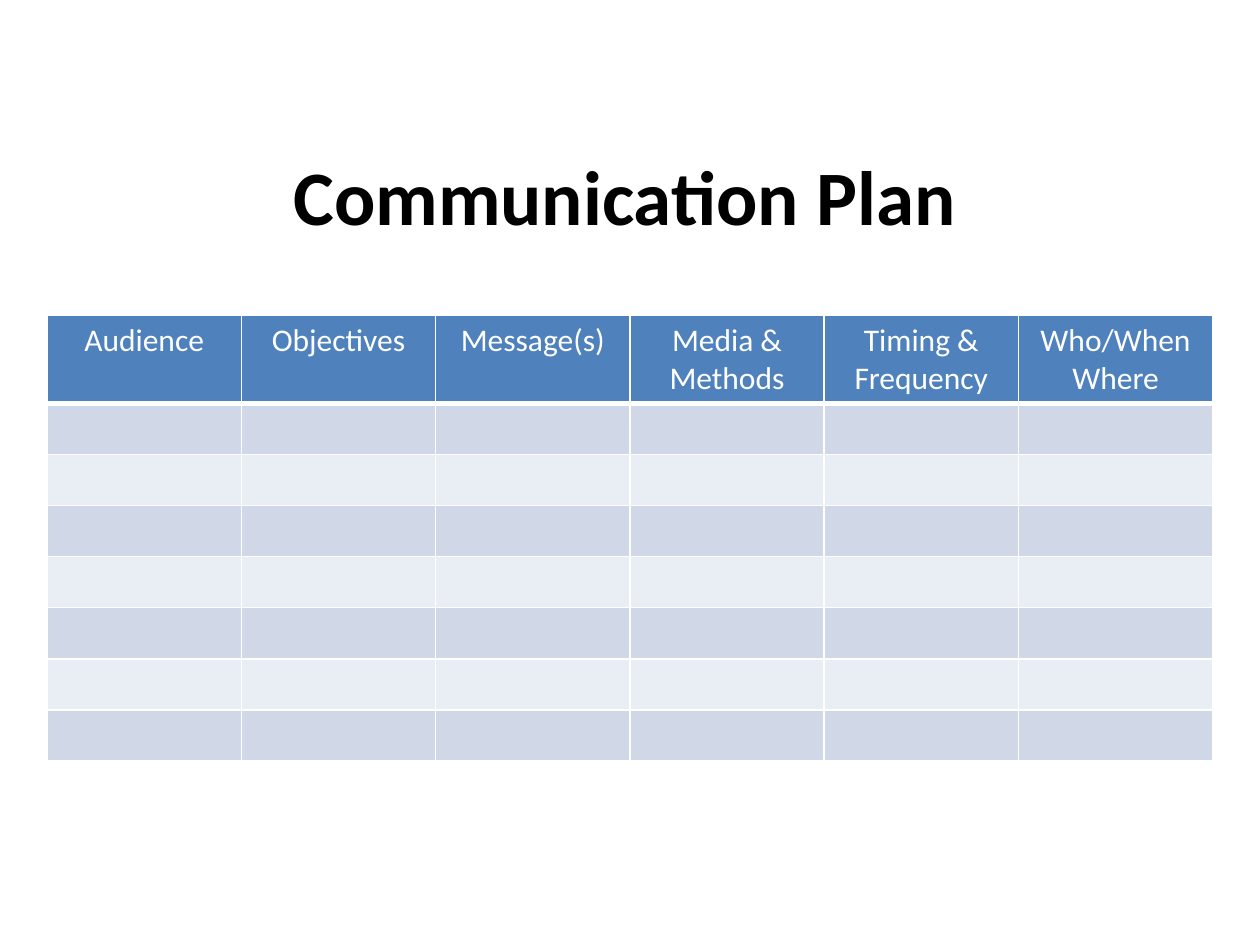
from dataclasses import dataclass

from lxml.etree import SubElement
from pptx import Presentation
from pptx.dml.color import RGBColor
from pptx.enum.text import MSO_ANCHOR, PP_ALIGN
from pptx.oxml.ns import qn
from pptx.slide import Slide
from pptx.table import _Cell
from pptx.text.text import TextFrame
from pptx.util import Cm, Pt


@dataclass(frozen=True)
class Theme:
    font: str = "Calibri"
    title_size: int = 44
    table_size: int = 18
    ink: str = "000000"
    white: str = "FFFFFF"
    header: str = "4F81BD"
    bands: tuple[str, str] = ("D0D8E8", "E9EDF4")
    rule_width: int = 1
    header_rule_width: int = 3


@dataclass(frozen=True)
class Area:
    left: float
    top: float
    width: float
    height: float

    def lengths(self) -> tuple[Cm, Cm, Cm, Cm]:
        return Cm(self.left), Cm(self.top), Cm(self.width), Cm(self.height)


THEME = Theme()
TITLE_AREA = Area(2.34, 2.34, 20.52, 3.18)
HEADER_HEIGHT = 1.78
BODY_HEIGHT = 1.03
BODY_ROWS = 7
TABLE_AREA = Area(0.95, 6.35, 23.5, HEADER_HEIGHT + BODY_ROWS * BODY_HEIGHT)
HEADINGS = (
    "Audience",
    "Objectives",
    "Message(s)",
    "Media & Methods",
    "Timing & Frequency",
    "Who/When\nWhere",
)


def format_text(frame: TextFrame, size: int, color: str, bold: bool) -> None:
    values = {"name": THEME.font, "size": Pt(size), "bold": bold}
    for para in frame.paragraphs:
        para.alignment = PP_ALIGN.CENTER
        for name, value in values.items():
            setattr(para.font, name, value)
        para.font.color.rgb = RGBColor.from_string(color)


def add_title(page: Slide, text: str) -> None:
    box = page.shapes.add_textbox(*TITLE_AREA.lengths())
    frame = box.text_frame
    frame.word_wrap = True
    frame.vertical_anchor = MSO_ANCHOR.MIDDLE
    frame.text = text
    format_text(frame, THEME.title_size, THEME.ink, True)


def style_cell(cell: _Cell, fill: str, bottom_width: int) -> None:
    widths = dict.fromkeys(("lnL", "lnR", "lnT"), THEME.rule_width)
    widths["lnB"] = bottom_width
    properties = cell._tc.get_or_add_tcPr()
    for side, width in widths.items():
        line = SubElement(properties, qn(f"a:{side}"), w=str(Pt(width)))
        paint = SubElement(line, qn("a:solidFill"))
        SubElement(paint, qn("a:srgbClr"), val=THEME.white)
    cell.fill.solid()
    cell.fill.fore_color.rgb = RGBColor.from_string(fill)


def add_plan_table(page: Slide) -> None:
    table = page.shapes.add_table(
        BODY_ROWS + 1, len(HEADINGS), *TABLE_AREA.lengths()
    ).table
    for column in table.columns:
        column.width = Cm(TABLE_AREA.width / len(HEADINGS))
    for index, row in enumerate(table.rows):
        is_header = index == 0
        row.height = Cm(HEADER_HEIGHT if is_header else BODY_HEIGHT)
        fill = THEME.header if is_header else THEME.bands[(index - 1) % 2]
        bottom = THEME.header_rule_width if is_header else THEME.rule_width
        for cell in row.cells:
            style_cell(cell, fill, bottom)
    for cell, heading in zip(table.rows[0].cells, HEADINGS):
        cell.text_frame.text = heading
        format_text(cell.text_frame, THEME.table_size, THEME.white, False)


def main() -> None:
    deck = Presentation()
    deck.slide_width, deck.slide_height = Cm(25.4), Cm(19.05)
    page = deck.slides.add_slide(deck.slide_layouts[6])
    add_title(page, "Communication Plan")
    add_plan_table(page)
    deck.save("out.pptx")


if __name__ == "__main__":
    main()
